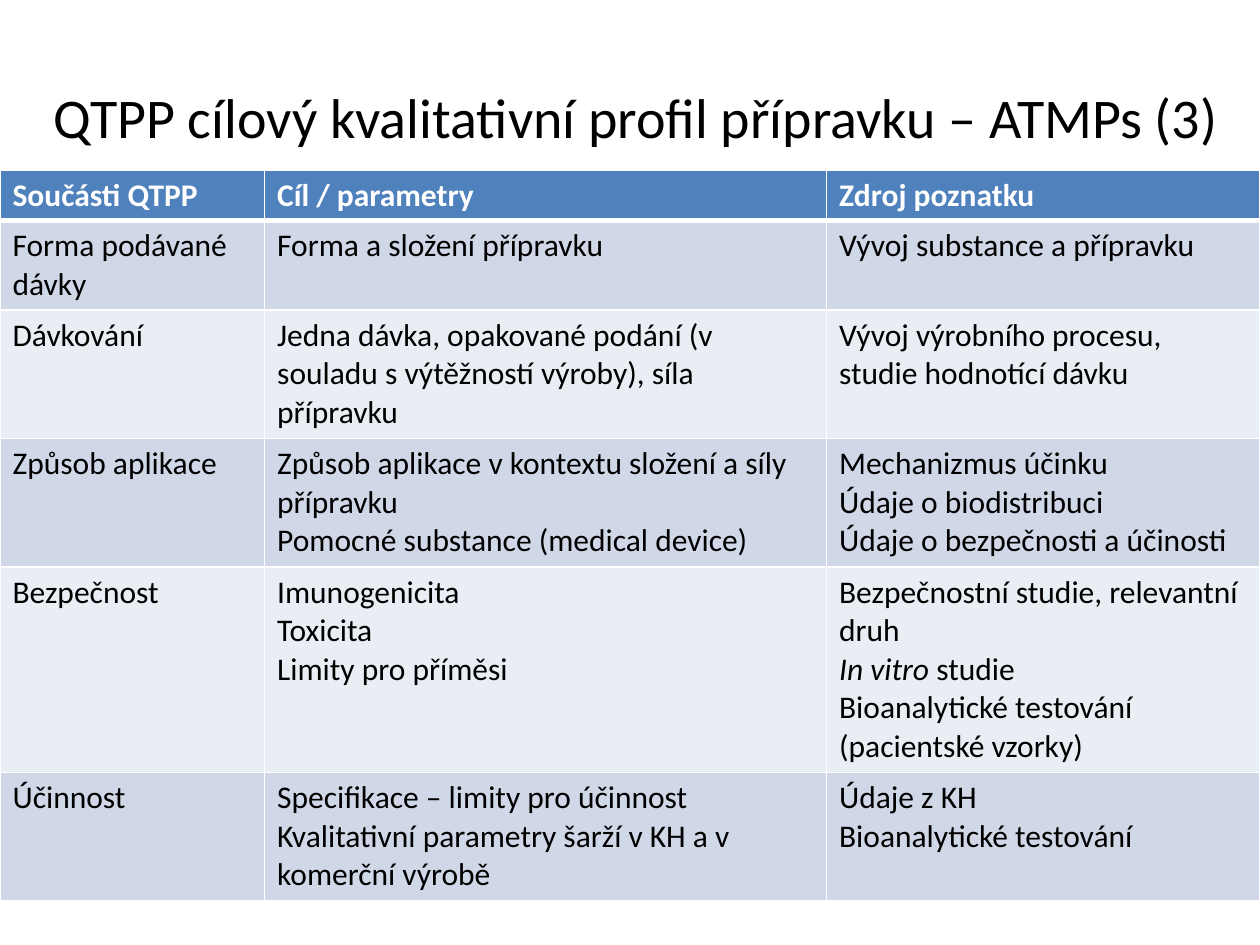
from lxml.etree import SubElement
from pptx import Presentation
from pptx.dml.color import RGBColor
from pptx.enum.text import MSO_ANCHOR, PP_ALIGN
from pptx.oxml.ns import qn
from pptx.util import Inches, Pt

COLORS = {
    "text": "000000",
    "white": "FFFFFF",
    "header": "4F81BD",
    "odd": "D0D8E8",
    "even": "E9EDF4",
}
COLUMN_WIDTHS = [2.1, 4.46, 3.44]
ROW_HEIGHTS = [0.4, 0.71, 1.02, 1.02, 1.63, 1.02]
ROWS = [
    [["Součásti QTPP"], ["Cíl / parametry"], ["Zdroj poznatku"]],
    [["Forma podávané dávky"], ["Forma a složení přípravku"], ["Vývoj substance a přípravku"]],
    [
        ["Dávkování"],
        ["Jedna dávka, opakované podání (v souladu s výtěžností výroby), síla přípravku"],
        ["Vývoj výrobního procesu, studie hodnotící dávku"],
    ],
    [
        ["Způsob aplikace"],
        ["Způsob aplikace v kontextu složení a síly přípravku", "Pomocné substance (medical device)"],
        ["Mechanizmus účinku", "Údaje o biodistribuci", "Údaje o bezpečnosti a účinosti"],
    ],
    [
        ["Bezpečnost"],
        ["Imunogenicita", "Toxicita", "Limity pro příměsi"],
        [
            "Bezpečnostní studie, relevantní druh",
            [("In vitro ", True), ("studie", False)],
            "Bioanalytické testování (pacientské vzorky)",
        ],
    ],
    [
        ["Účinnost"],
        ["Specifikace – limity pro účinnost", "Kvalitativní parametry šarží v KH a v komerční výrobě"],
        ["Údaje z KH", "Bioanalytické testování"],
    ],
]


class SlideBuilder:
    font = "Calibri"
    title_size = 32
    table_size = 18

    def __init__(self, slide):
        self.slide = slide

    def add_run(self, paragraph, text, size, color="text", bold=False, italic=False):
        run = paragraph.add_run()
        run.text = text
        run.font.name = self.font
        run.font.size = Pt(size)
        run.font.bold = bold
        run.font.italic = italic
        run.font.color.rgb = RGBColor.from_string(COLORS[color])

    def add_title(self, text, left, top, width, height):
        shape = self.slide.shapes.add_textbox(Inches(left), Inches(top), Inches(width), Inches(height))
        frame = shape.text_frame
        frame.word_wrap = True
        frame.vertical_anchor = MSO_ANCHOR.MIDDLE
        paragraph = frame.paragraphs[0]
        paragraph.alignment = PP_ALIGN.CENTER
        self.add_run(paragraph, text, self.title_size)

    def add_borders(self, cell, **widths):
        properties = cell._tc.get_or_add_tcPr()
        for side in "LRTB":
            line = SubElement(properties, qn(f"a:ln{side}"), w=str(Pt(widths.get(side, 1))))
            fill = SubElement(line, qn("a:solidFill"))
            SubElement(fill, qn("a:srgbClr"), val=COLORS["white"])

    def fill_cell(self, cell, paragraphs, fill, color, bold):
        cell.fill.solid()
        cell.fill.fore_color.rgb = RGBColor.from_string(COLORS[fill])
        for index, content in enumerate(paragraphs):
            frame = cell.text_frame
            paragraph = frame.add_paragraph() if index else frame.paragraphs[0]
            runs = [(content, False)] if isinstance(content, str) else content
            for text, italic in runs:
                self.add_run(paragraph, text, self.table_size, color, bold, italic)

    def add_table(self, rows, left, top, widths, heights):
        table = self.slide.shapes.add_table(
            len(rows), len(widths), Inches(left), Inches(top),
            Inches(sum(widths)), Inches(sum(heights)),
        ).table
        for column, width in zip(table.columns, widths):
            column.width = Inches(width)
        for row_index, (row, height) in enumerate(zip(rows, heights)):
            table.rows[row_index].height = Inches(height)
            header = row_index == 0
            fill = "header" if header else ("even", "odd")[row_index % 2]
            for column_index, paragraphs in enumerate(row):
                cell = table.cell(row_index, column_index)
                self.add_borders(cell, B=3 if header else 1, T=3 if row_index == 1 else 1)
                self.fill_cell(cell, paragraphs, fill, "white" if header else "text", header)


def main():
    presentation = Presentation()
    presentation.slide_width = Inches(10)
    presentation.slide_height = Inches(7.5)
    builder = SlideBuilder(presentation.slides.add_slide(presentation.slide_layouts[6]))
    builder.add_title(" QTPP cílový kvalitativní profil přípravku – ATMPs (3)", 0, 0.3, 10, 1.25)
    builder.add_table(ROWS, 0, 1.35, COLUMN_WIDTHS, ROW_HEIGHTS)
    presentation.save("out.pptx")


if __name__ == "__main__":
    main()
